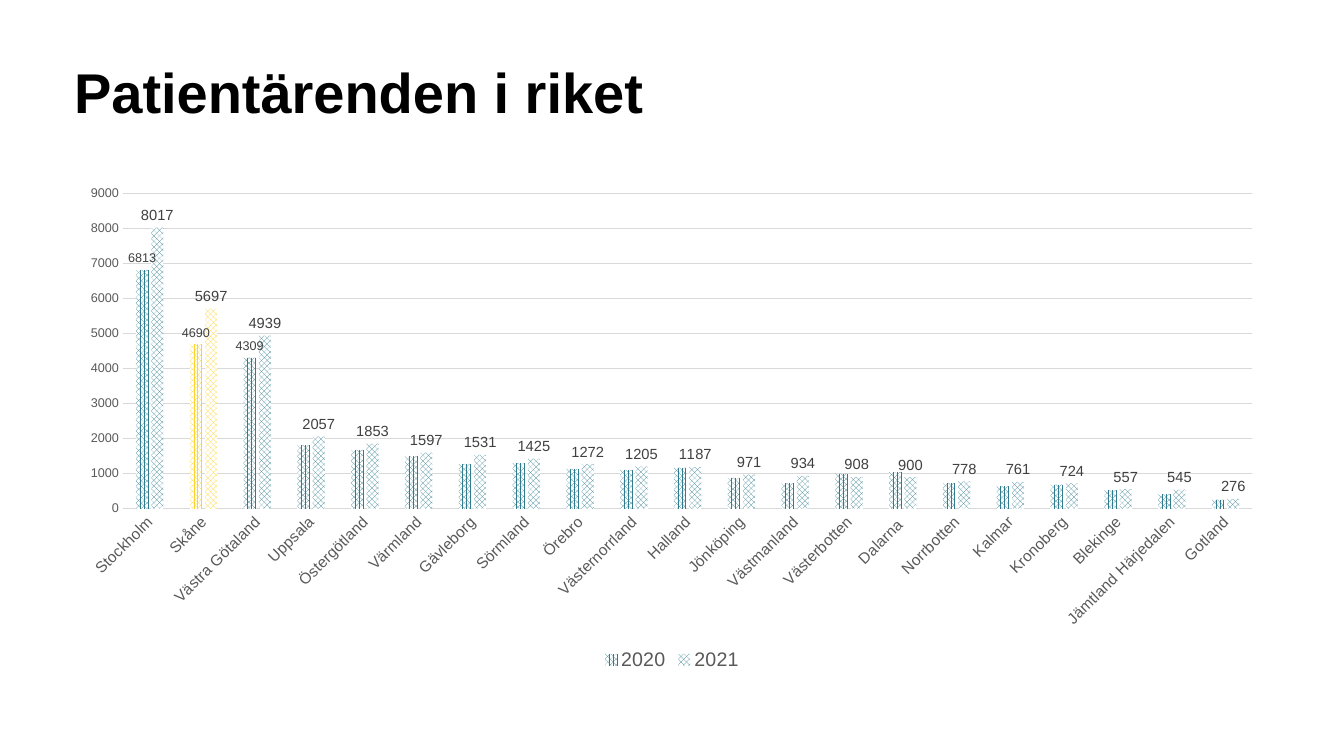
from lxml import etree
from pptx import Presentation
from pptx.chart.data import CategoryChartData
from pptx.dml.color import RGBColor
from pptx.enum import chart as ch, dml, text
from pptx.oxml import parse_xml
from pptx.oxml.ns import nsdecls, qn
from pptx.util import Pt

BLACK = RGBColor(0x00, 0x00, 0x00)
WHITE = RGBColor(0xFF, 0xFF, 0xFF)
TEAL = RGBColor(0x30, 0x7C, 0x8E)
YELLOW = RGBColor(0xFD, 0xD3, 0x2F)
GRID = RGBColor(0xD9, 0xD9, 0xD9)
GREY = RGBColor(0x59, 0x59, 0x59)
DARK = RGBColor(0x40, 0x40, 0x40)

REGIONS = ["Stockholm", "Skåne", "Västra Götaland", "Uppsala", "Östergötland",
           "Värmland", "Gävleborg", "Sörmland", "Örebro", "Västernorrland",
           "Halland", "Jönköping", "Västmanland", "Västerbotten", "Dalarna ",
           "Norrbotten", "Kalmar", "Kronoberg", "Blekinge",
           "Jämtland Härjedalen", "Gotland"]
CASES = {
    "2020": [6813, 4690, 4309, 1809, 1679, 1490, 1275, 1303, 1135, 1105, 1170,
             879, 721, 1002, 1046, 732, 632, 685, 522, 408, 255],
    "2021": [8017, 5708, 4939, 2057, 1853, 1597, 1531, 1425, 1272, 1205, 1187,
             971, 934, 908, 900, 778, 761, 724, 557, 545, 276],
}
SKANE = REGIONS.index("Skåne")
LABELLED_2020 = 3
PATTERNS = [dml.MSO_PATTERN.PERCENT_75, dml.MSO_PATTERN.LARGE_CHECKER_BOARD]
LABEL_SIZES = [9, 10.5]
PLOT_AREA = {"x": 0.046, "y": 0.034, "w": 0.934, "h": 0.633}


def set_attrs(obj, values):
    for name, value in values.items():
        setattr(obj, name, value)


def set_font(font, size, color, bold=False):
    set_attrs(font, {"name": "Arial", "size": Pt(size), "bold": bold})
    font.color.rgb = color


def set_line(line, color):
    line.color.rgb = color
    line.width = Pt(0.75)


def set_pattern(fill, pattern, color):
    fill.patterned()
    fill.pattern = pattern
    fill.fore_color.rgb = color
    fill.back_color.rgb = WHITE


def add_title(s, x, y, w, h):
    tf = s.shapes.add_textbox(Pt(x), Pt(y), Pt(w), Pt(h)).text_frame
    set_attrs(tf, {"word_wrap": True, "vertical_anchor": text.MSO_ANCHOR.TOP,
                   "margin_left": Pt(5), "margin_top": Pt(8)})
    p = tf.paragraphs[0]
    p.line_spacing = 1.1
    r = p.add_run()
    r.text = "Patientärenden i riket"
    set_font(r.font, 40, BLACK, True)


def place_plot(chart):
    area = chart._chartSpace.chart.plotArea
    for old in area.findall(qn("c:layout")):
        area.remove(old)
    layout = parse_xml(f"<c:layout {nsdecls('c')}><c:manualLayout/></c:layout>")
    values = {"layoutTarget": "inner", "xMode": "edge", "yMode": "edge", **PLOT_AREA}
    for name, value in values.items():
        etree.SubElement(layout[0], qn(f"c:{name}")).set("val", str(value))
    area.insert(0, layout)


def format_axes(chart):
    cat, val = chart.category_axis, chart.value_axis
    for axis, size in ((cat, 11), (val, 9)):
        set_attrs(axis, {"major_tick_mark": ch.XL_TICK_MARK.NONE,
                         "minor_tick_mark": ch.XL_TICK_MARK.NONE})
        set_font(axis.tick_labels.font, size, GREY)
    set_line(cat.format.line, GRID)
    cat._element.find(qn("c:txPr")).find(qn("a:bodyPr")).set("rot", "-2700000")
    set_attrs(val, {"minimum_scale": 0, "maximum_scale": 9000, "major_unit": 1000,
                    "has_major_gridlines": True})
    val.format.line.fill.background()
    set_line(val.major_gridlines.format.line, GRID)


def format_series(series, pattern, size):
    set_pattern(series.format.fill, pattern, TEAL)
    set_pattern(series.points[SKANE].format.fill, pattern, YELLOW)
    labels = series.data_labels
    set_attrs(labels, {"show_value": True, "position": ch.XL_LABEL_POSITION.OUTSIDE_END})
    set_font(labels.font, size, DARK)


def hide_labels(series, first):
    labels = series.data_labels._element
    for pos, idx in enumerate(range(first, len(REGIONS))):
        labels.insert(pos, parse_xml(
            f'<c:dLbl {nsdecls("c")}><c:idx val="{idx}"/><c:delete val="1"/></c:dLbl>'))


def add_case_chart(s, x, y, w, h):
    data = CategoryChartData()
    data.categories = REGIONS
    for year, values in CASES.items():
        data.add_series(year, values)
    chart = s.shapes.add_chart(ch.XL_CHART_TYPE.COLUMN_CLUSTERED,
                               Pt(x), Pt(y), Pt(w), Pt(h), data).chart
    set_attrs(chart, {"has_title": False, "has_legend": True})
    set_font(chart.font, 10, BLACK)
    set_attrs(chart.legend, {"position": ch.XL_LEGEND_POSITION.BOTTOM,
                             "include_in_layout": False})
    set_font(chart.legend.font, 14, GREY)
    plot = chart.plots[0]
    set_attrs(plot, {"gap_width": 219, "overlap": -27, "vary_by_categories": False})
    place_plot(chart)
    format_axes(chart)
    for series, pattern, size in zip(plot.series, PATTERNS, LABEL_SIZES):
        format_series(series, pattern, size)
    first, last = plot.series
    hide_labels(first, LABELLED_2020)
    label = last.points[SKANE].data_label
    r = label.text_frame.paragraphs[0].add_run()
    r.text = "5697"
    set_font(r.font, LABEL_SIZES[1], DARK)
    label.position = ch.XL_LABEL_POSITION.OUTSIDE_END


def main():
    prs = Presentation()
    set_attrs(prs, {"slide_width": Pt(960), "slide_height": Pt(540)})
    s = prs.slides.add_slide(prs.slide_layouts[6])
    add_title(s, 48, 28, 864, 90)
    add_case_chart(s, 48, 126, 864, 356)
    prs.save("out.pptx")


if __name__ == "__main__":
    main()
